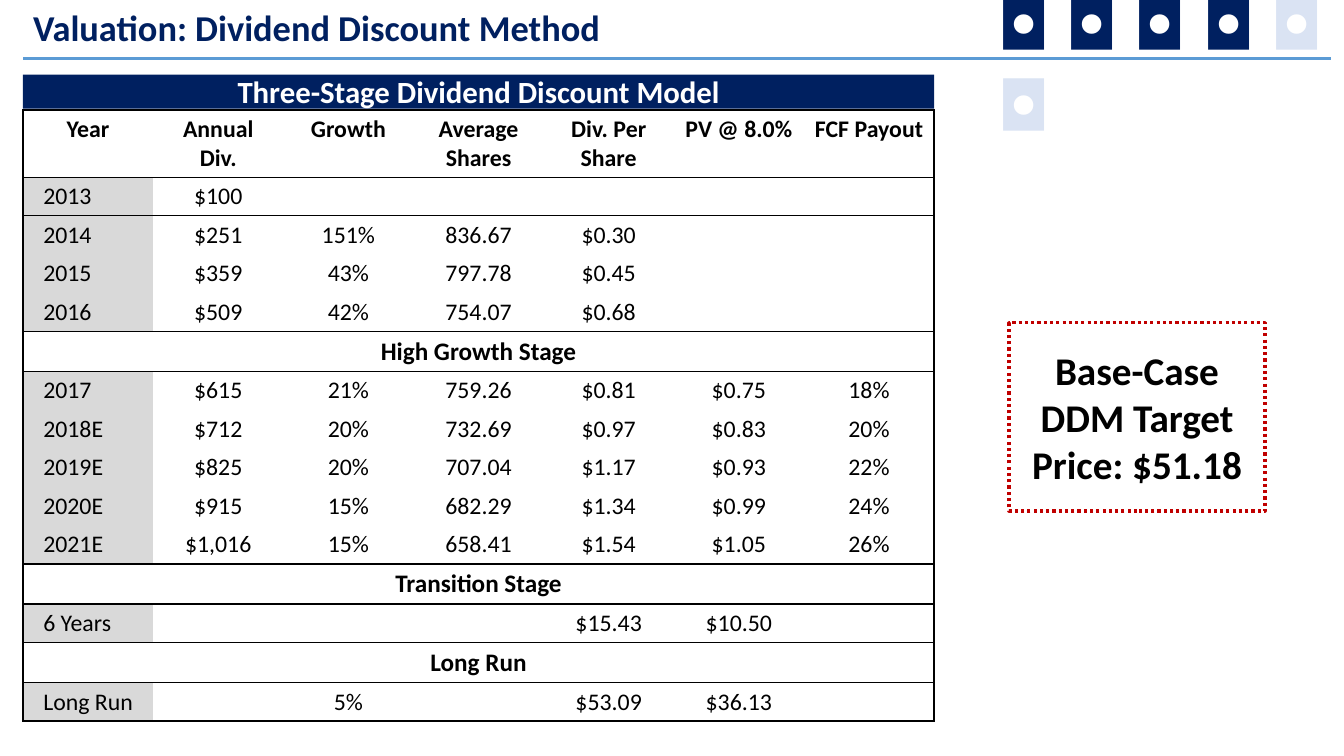
"""Build a slide with a three-stage dividend discount valuation table."""
from lxml import etree
from pptx import Presentation
from pptx.dml.color import RGBColor
from pptx.enum import dml, shapes, text
from pptx.oxml.ns import qn
from pptx.util import Cm, Pt

NAVY, BLUE, RED = "002060", "5B9BD5", "C00000"
BLACK, WHITE, GREY, PALE = "000000", "FFFFFF", "D9D9D9", "DAE3F3"
LEFT, TABLE_TOP, TABLE_WIDTH = 0.58, 2.77, 22.96
HEADER_HEIGHT, STAGE_HEIGHT, YEAR_HEIGHT = 1.7, 1.01, 0.97
CENTER = text.PP_ALIGN.CENTER

HEADER = ["Year", "Annual Div.", "Growth", "Average Shares",
          "Div. Per Share", "PV @ 8.0%", "FCF Payout"]
GROUPS = [
    [HEADER],
    [["2013", "$100", "", "", "", "", ""]],
    [["2014", "$251", "151%", "836.67", "$0.30", "", ""],
     ["2015", "$359", "43%", "797.78", "$0.45", "", ""],
     ["2016", "$509", "42%", "754.07", "$0.68", "", ""]],
    [["High Growth Stage"]],
    [["2017", "$615", "21%", "759.26", "$0.81", "$0.75", "18%"],
     ["2018E", "$712", "20%", "732.69", "$0.97", "$0.83", "20%"],
     ["2019E", "$825", "20%", "707.04", "$1.17", "$0.93", "22%"],
     ["2020E", "$915", "15%", "682.29", "$1.34", "$0.99", "24%"],
     ["2021E", "$1,016", "15%", "658.41", "$1.54", "$1.05", "26%"]],
    [["Transition Stage"]],
    [["6 Years", "", "", "", "$15.43", "$10.50", ""]],
    [["Long Run"]],
    [["Long Run", "", "5%", "", "$53.09", "$36.13", ""]],
]


def color(value):
    """Turn a hex string into a colour."""
    return RGBColor.from_string(value)


def box(left, top, width, height):
    """Turn a box in centimetres into lengths."""
    return Cm(left), Cm(top), Cm(width), Cm(height)


def add_run(paragraph, words, size, hex_color, bold=False):
    """Add one formatted run to a paragraph."""
    run = paragraph.add_run()
    run.text = words
    run.font.name = "Calibri"
    run.font.size = Pt(size)
    run.font.bold = bold
    run.font.color.rgb = color(hex_color)


def add_title(slide, words):
    """Place and fill the title placeholder."""
    title = slide.shapes.title
    title.left, title.top, title.width, title.height = box(LEFT, 0, 32.69, 1.37)
    frame = title.text_frame
    frame.auto_size = text.MSO_AUTO_SIZE.NONE
    frame.vertical_anchor = text.MSO_ANCHOR.TOP
    paragraph = frame.paragraphs[0]
    paragraph.alignment = text.PP_ALIGN.LEFT
    add_run(paragraph, words, 26, NAVY, True)


def add_rule(slide, left, right, top):
    """Draw the line below the title."""
    rule = slide.shapes.add_connector(
        shapes.MSO_CONNECTOR.STRAIGHT, Cm(left), Cm(top), Cm(right), Cm(top))
    rule.line.color.rgb = color(BLUE)
    rule.line.width = Pt(2.25)
    etree.SubElement(rule._element.spPr, qn("a:effectLst"))


def add_progress(slide):
    """Add the progress marks at the top right."""
    marks = slide.shapes.add_textbox(*box(24.89, -0.56, 8.76, 2.31))
    marks.text_frame.word_wrap = True
    paragraph = marks.text_frame.paragraphs[0]
    add_run(paragraph, "◘ ◘ ◘ ◘ ", 48, NAVY)
    add_run(paragraph, "◘ ◘", 48, PALE)


def add_label(slide, place, words, size, hex_color):
    """Add an unfilled, unlined rectangle with bold centred text."""
    label = slide.shapes.add_shape(shapes.MSO_SHAPE.RECTANGLE, *box(*place))
    label.shadow.inherit = False
    label.fill.background()
    label.line.fill.background()
    label.text_frame.word_wrap = True
    label.text_frame.vertical_anchor = text.MSO_ANCHOR.MIDDLE
    paragraph = label.text_frame.paragraphs[0]
    paragraph.alignment = CENTER
    add_run(paragraph, words, size, hex_color, True)
    return label


def set_borders(cell, drawn):
    """Draw the named sides of a cell and clear the others."""
    properties = cell._tc.get_or_add_tcPr()
    for position, side in enumerate("LRTB"):
        line = etree.Element(qn(f"a:ln{side}"), w=str(Pt(1)))
        if side in drawn:
            fill = etree.SubElement(line, qn("a:solidFill"))
            etree.SubElement(fill, qn("a:srgbClr"), val=BLACK)
        else:
            etree.SubElement(line, qn("a:noFill"))
        properties.insert(position, line)


def fill_cell(cell, words, size, bold, is_year):
    """Set the text, margins and fill of a cell."""
    cell.margin_top = cell.margin_bottom = Cm(0.12)
    cell.margin_left = Cm(0.51 if is_year else 0.24)
    cell.margin_right = Cm(0.24)
    if is_year:
        cell.fill.solid()
        cell.fill.fore_color.rgb = color(GREY)
    else:
        cell.fill.background()
    paragraph = cell.text_frame.paragraphs[0]
    paragraph.alignment = text.PP_ALIGN.LEFT if is_year else CENTER
    if words:
        add_run(paragraph, words, size, BLACK, bold)
    else:
        etree.SubElement(paragraph._p, qn("a:endParaRPr"), sz=str(size * 100))


def fill_row(table, index, values, sides):
    """Fill one header, stage or year row."""
    is_header, is_stage = values is HEADER, len(values) == 1
    last = len(HEADER) - 1
    height = (HEADER_HEIGHT if is_header
              else STAGE_HEIGHT if is_stage else YEAR_HEIGHT)
    table.rows[index].height = Cm(height)
    if is_stage:
        table.cell(index, 0).merge(table.cell(index, last))
    for column in range(last + 1):
        cell = table.cell(index, column)
        words = values[column] if column < len(values) else ""
        is_year = column == 0 and not (is_header or is_stage)
        fill_cell(cell, words, 18 if is_stage else 17,
                  is_header or is_stage, is_year)
        left = "L" if column == 0 else ""
        right = "R" if column == last or cell.is_merge_origin else ""
        set_borders(cell, sides + left + right)


def add_model_table(slide):
    """Add the dividend table, ruled above and below each group of rows."""
    count = sum(len(group) for group in GROUPS)
    frame = slide.shapes.add_table(
        count, len(HEADER), *box(LEFT, TABLE_TOP, TABLE_WIDTH, 15.4))
    table = frame.table
    table.first_row = table.horz_banding = False
    for column in table.columns:
        column.width = Cm(TABLE_WIDTH / len(HEADER))
    index = 0
    for group in GROUPS:
        for position, values in enumerate(group):
            top = "T" if position == 0 else ""
            bottom = "B" if position == len(group) - 1 else ""
            fill_row(table, index, values, top + bottom)
            index += 1


def main():
    """Build and save the presentation."""
    presentation = Presentation()
    presentation.slide_width, presentation.slide_height = Cm(33.87), Cm(19.05)
    slide = presentation.slides.add_slide(presentation.slide_layouts[5])
    banner = add_label(slide, (LEFT, 1.88, TABLE_WIDTH, 0.86),
                       "Three-Stage Dividend Discount Model", 22, WHITE)
    banner.fill.solid()
    banner.fill.fore_color.rgb = color(NAVY)
    add_rule(slide, LEFT, 33.55, 1.47)
    add_title(slide, "Valuation: Dividend Discount Method")
    add_progress(slide)
    add_model_table(slide)
    target = add_label(slide, (25.43, 8.13, 6.45, 4.75),
                       "Base-Case DDM Target Price: $51.18", 28, BLACK)
    target.line.color.rgb = color(RED)
    target.line.width = Pt(2.25)
    target.line.dash_style = dml.MSO_LINE.ROUND_DOT
    presentation.save("out.pptx")


if __name__ == "__main__":
    main()
